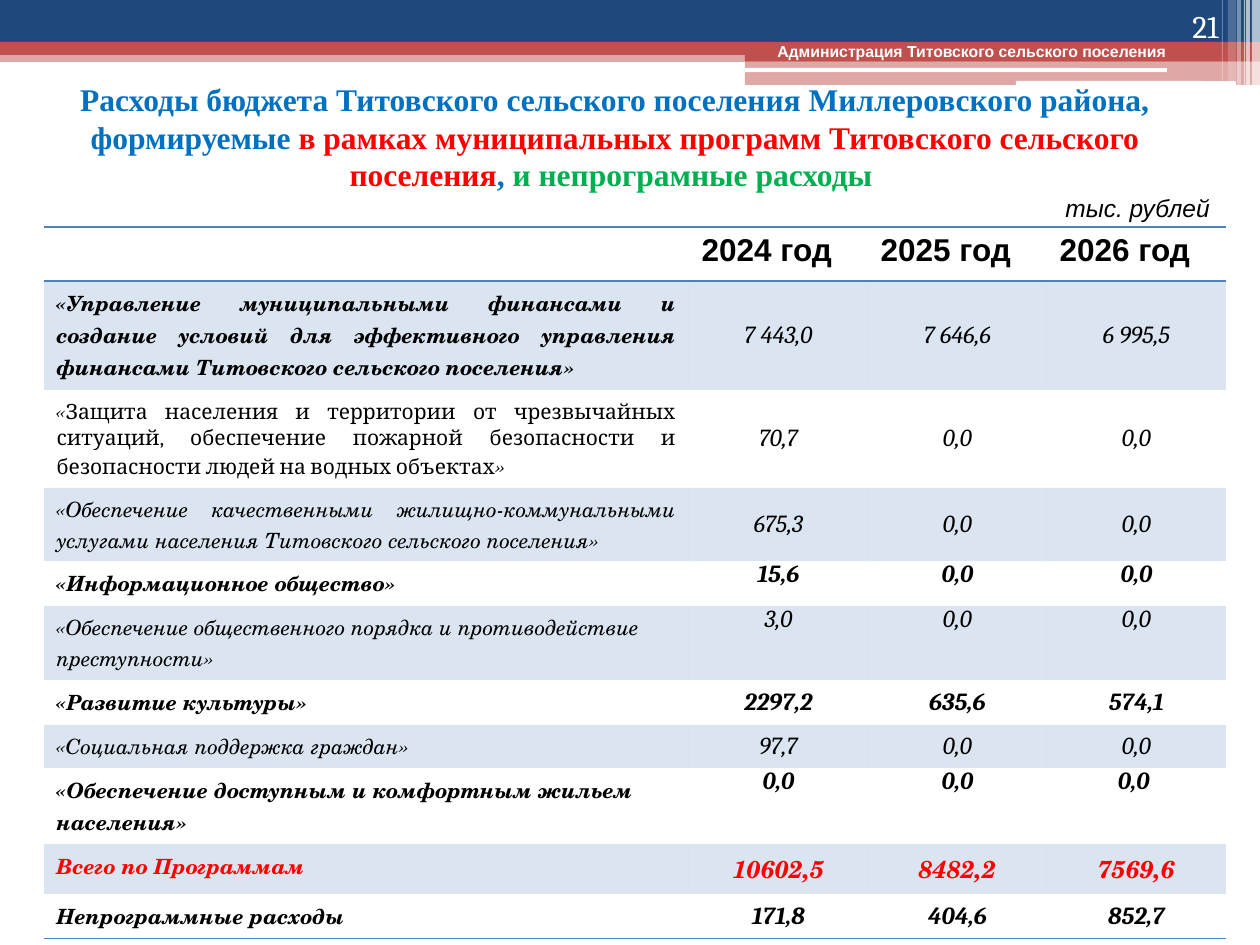
from lxml import etree
from pptx import Presentation
from pptx import util as u
from pptx.dml.color import RGBColor
from pptx.enum import shapes, text
from pptx.oxml import ns

PX = u.Inches(1) // 126
NAVY = RGBColor(0x1F, 0x49, 0x7D)
BRICK = RGBColor(0xC0, 0x50, 0x4D)
BLUE = RGBColor(0x4F, 0x81, 0xBD)
TITLE_BLUE = RGBColor(0x00, 0x70, 0xC0)
GREEN = RGBColor(0x00, 0xB0, 0x50)
RED = RGBColor(0xFF, 0x00, 0x00)
WHITE = RGBColor(0xFF, 0xFF, 0xFF)
BLACK = RGBColor(0x00, 0x00, 0x00)
SERIF = "TeX Gyre Schola"
LEFT, CENTER = text.PP_ALIGN.LEFT, text.PP_ALIGN.CENTER
RIGHT, JUSTIFY = text.PP_ALIGN.RIGHT, text.PP_ALIGN.JUSTIFY
TOP, MIDDLE, BOTTOM = text.MSO_ANCHOR.TOP, text.MSO_ANCHOR.MIDDLE, text.MSO_ANCHOR.BOTTOM


def write(frame, content, size=12, font="Arial", color=BLACK, bold=False, italic=False, align=LEFT):
    frame.word_wrap = True
    paragraph = frame.paragraphs[0]
    paragraph.alignment = align
    runs = [(content, {})] if isinstance(content, str) else content
    for words, changes in runs:
        run = paragraph.add_run()
        run.text = words
        run.font.size = u.Pt(size)
        run.font.name = changes.get("font", font)
        run.font.color.rgb = changes.get("color", color)
        run.font.bold = bold
        run.font.italic = changes.get("italic", italic)


def paint(fill, properties, color, opacity):
    fill.solid()
    fill.fore_color.rgb = color
    if opacity < 100:
        tint = properties.find(ns.qn("a:solidFill"))[0]
        etree.SubElement(tint, ns.qn("a:alpha"), val=str(opacity * 1000))


presentation = Presentation()
presentation.slide_width, presentation.slide_height = u.Inches(10), u.Inches(7.5)
slide = presentation.slides.add_slide(presentation.slide_layouts[6])

RECTANGLE, ROUNDED = shapes.MSO_SHAPE.RECTANGLE, shapes.MSO_SHAPE.ROUNDED_RECTANGLE
bands = [
    (RECTANGLE, 0, 50, 1260, 12, BRICK, 50),
    (RECTANGLE, 0, 0, 1260, 42, NAVY, 100),
    (RECTANGLE, 0, 42, 1260, 13, BRICK, 100),
    (RECTANGLE, 745, 49, 515, 12, BRICK, 100),
    (RECTANGLE, 745, 60, 515, 25, BRICK, 50),
    (ROUNDED, 745, 68, 422, 4, WHITE, 100),
    (ROUNDED, 1016, 81, 220, 5, WHITE, 100),
    (RECTANGLE, 1252, 0, 8, 86, WHITE, 65),
    (RECTANGLE, 1246, 0, 4, 86, WHITE, 65),
    (RECTANGLE, 1244, 0, 1, 86, WHITE, 60),
    (RECTANGLE, 1237, 0, 4, 86, WHITE, 40),
    (RECTANGLE, 1228, 0, 8, 81, WHITE, 20),
    (RECTANGLE, 1222, 0, 1, 81, WHITE, 30),
]
for preset, left, top, width, height, color, opacity in bands:
    band = slide.shapes.add_shape(preset, left * PX, top * PX, width * PX, height * PX)
    band.shadow.inherit = False
    band.line.fill.background()
    paint(band.fill, band._element.spPr, color, opacity)

title = [
    ("Расходы бюджета Титовского сельского поселения Миллеровского района, формируемые ", {}),
    ("в рамках муниципальных программ Титовского сельского поселения", {"color": RED}),
    (", ", {}),
    ("и непрограмные расходы ", {"color": GREEN}),
]
captions = [
    (0, 76, 1230, 121, MIDDLE, title,
     dict(size=18, font="Times New Roman", color=TITLE_BLUE, bold=True, align=CENTER)),
    (1126, 1, 105, 50, BOTTOM, "21", dict(size=18, font="Cambria", color=WHITE, align=RIGHT)),
    (1053, 187, 179, 43, TOP, "тыс. рублей", dict(size=14, italic=True)),
    (718, 36, 507, 32, TOP, "Администрация Титовского сельского поселения",
     dict(size=9, color=WHITE, bold=True, align=CENTER)),
]
for left, top, width, height, anchor, content, style in captions:
    caption = slide.shapes.add_textbox(left * PX, top * PX, width * PX, height * PX)
    caption.text_frame.vertical_anchor = anchor
    write(caption.text_frame, content, **style)

protection = [
    ("«", {}),
    ("Защита населения и территории от чрезвычайных ситуаций, обеспечение пожарной "
     "безопасности и безопасности людей на водных объектах", {"font": "Cambria", "italic": False}),
    ("»", {}),
]
years = ["2024 год", "2025 год", "2026 год"]
programs = [
    (109, "«Управление муниципальными финансами и создание условий для эффективного "
          "управления финансами Титовского сельского поселения»",
     ["7 443,0", "7 646,6", "6 995,5"], True, JUSTIFY, MIDDLE),
    (98, protection, ["70,7", "0,0", "0,0"], False, JUSTIFY, MIDDLE),
    (73, "«Обеспечение качественными жилищно-коммунальными услугами населения "
         "Титовского сельского поселения»",
     ["675,3", "0,0", "0,0"], False, JUSTIFY, MIDDLE),
    (45, "«Информационное общество»", ["15,6", "0,0", "0,0"], True, LEFT, TOP),
    (74, "«Обеспечение общественного порядка и противодействие преступности»",
     ["3,0", "0,0", "0,0"], False, LEFT, TOP),
    (45, "«Развитие культуры»", ["2297,2", "635,6", "574,1"], True, LEFT, MIDDLE),
    (43, "«Социальная поддержка граждан»", ["97,7", "0,0", "0,0"], False, LEFT, MIDDLE),
    (76, "«Обеспечение доступным и комфортным жильем населения»",
     ["0,0", "0,0", "0,0 "], True, LEFT, TOP),
    (50, "Всего по Программам", ["10602,5", "8482,2", "7569,6"], True, LEFT, TOP),
    (45, "Непрограммные расходы", ["171,8", "404,6", "852,7"], True, LEFT, MIDDLE),
]
heights = [54] + [program[0] for program in programs]
widths = [645, 179, 179, 179]
table = slide.shapes.add_table(len(heights), len(widths), 44 * PX, 227 * PX,
                               sum(widths) * PX, sum(heights) * PX).table
table.first_row = table.horz_banding = False
table._tbl.tblPr.find(ns.qn("a:tableStyleId")).text = "{2D5ABB26-0587-4C30-8999-92F81FD0307C}"
for column, width in zip(table.columns, widths):
    column.width = width * PX
for row, height in zip(table.rows, heights):
    row.height = height * PX

for column, year in enumerate(years, 1):
    write(table.cell(0, column).text_frame, year, size=18, bold=True)

for row, (height, label, values, bold, align, anchor) in enumerate(programs, 1):
    total = label == "Всего по Программам"
    color = RED if total else BLACK
    write(table.cell(row, 0).text_frame, label, font=SERIF, color=color,
          bold=bold, italic=True, align=align)
    for column, value in enumerate(values, 1):
        cell = table.cell(row, column)
        cell.vertical_anchor = anchor
        if not total:
            cell.margin_left = cell.margin_right = 9 * PX
            cell.margin_top = cell.margin_bottom = 0
        write(cell.text_frame, value, size=14, font=SERIF if total else "Cambria",
              color=color, bold=bold and row > 1, italic=True, align=CENTER)

borders = {0: ["a:lnT", "a:lnB"], len(programs): ["a:lnB"]}
for row in range(len(heights)):
    for column in range(len(widths)):
        cell = table.cell(row, column)
        properties = cell._tc.get_or_add_tcPr()
        if row % 2:
            paint(cell.fill, properties, BLUE, 20)
        else:
            cell.fill.background()
        for position, side in enumerate(borders.get(row, [])):
            border = etree.Element(ns.qn(side), w=str(u.Pt(1)))
            solid = etree.SubElement(border, ns.qn("a:solidFill"))
            etree.SubElement(solid, ns.qn("a:srgbClr"), val=str(BLUE))
            properties.insert(position, border)

presentation.save("out.pptx")
